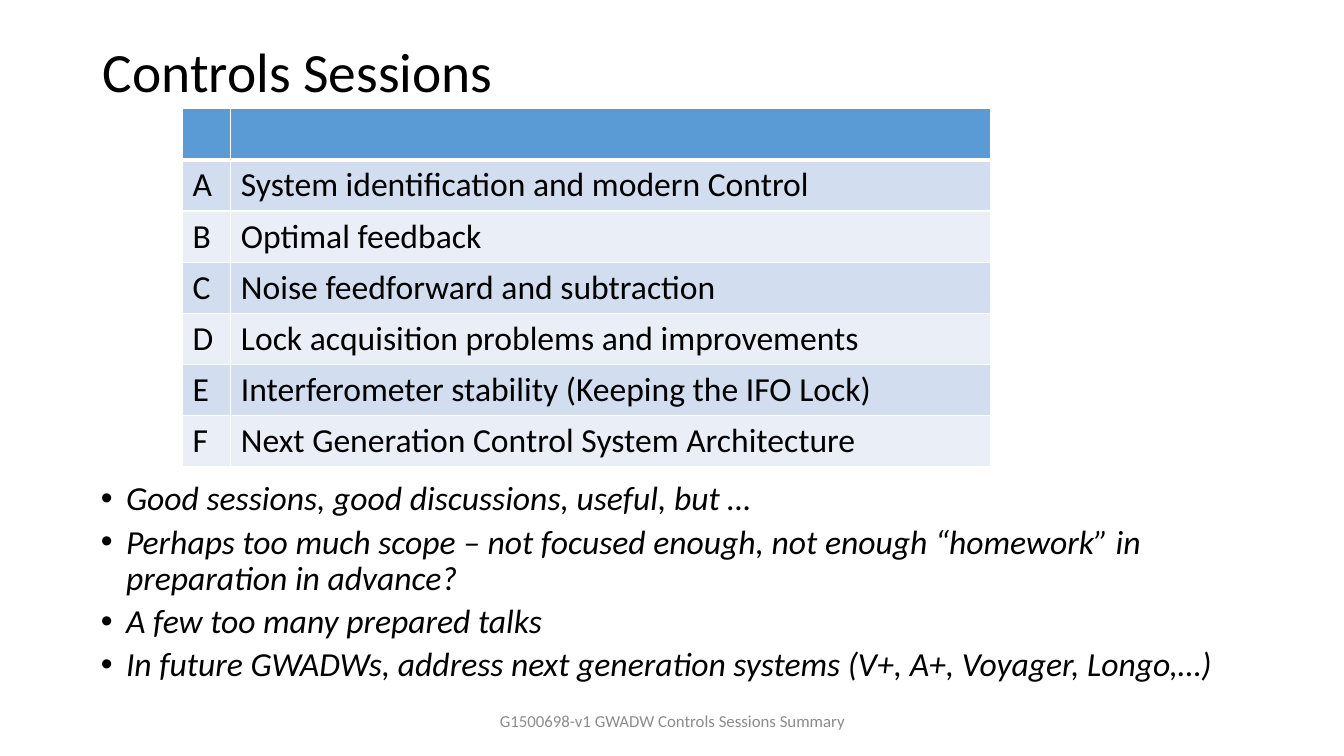
from dataclasses import dataclass

import pptx
import pptx.dml.color
import pptx.enum.text
import pptx.oxml
import pptx.oxml.ns
import pptx.util
from pptx.util import Inches

PP_ALIGN = pptx.enum.text.PP_ALIGN
ANCHOR = pptx.enum.text.MSO_ANCHOR


@dataclass(frozen=True)
class Theme:
    font: str = "Calibri"
    text: str = "000000"
    muted: str = "8C8C8C"
    header: str = "5B9BD5"
    bands: tuple = ("D2DEEF", "EAEFF7")
    border: str = "FFFFFF"
    title_size: float = 39.6
    body_size: float = 24
    footer_size: float = 12


THEME = Theme()

SESSIONS = [
    "System identification and modern Control",
    "Optimal feedback",
    "Noise feedforward and subtraction",
    "Lock acquisition problems and improvements",
    "Interferometer stability (Keeping the IFO Lock)",
    "Next Generation Control System Architecture",
]
REMARKS = [
    "Good sessions, good discussions, useful, but …",
    "Perhaps too much scope – not focused enough, not enough “homework” in preparation in advance?",
    "A few too many prepared talks",
    "In future GWADWs, address next generation systems (V+, A+, Voyager, Longo,…)",
]


def rgb(color):
    return pptx.dml.color.RGBColor.from_string(color)


def style(p, size, color=THEME.text, italic=None):
    p.font.name = THEME.font
    p.font.size = pptx.util.Pt(size)
    p.font.color.rgb = rgb(color)
    p.font.italic = italic


def place(sp, left, top, width, height):
    sp.left, sp.top = Inches(left), Inches(top)
    sp.width, sp.height = Inches(width), Inches(height)


def set_title(slide, text):
    sp = slide.shapes.title
    place(sp, 0.92, 0.4, 11.5, 0.68)
    tf = sp.text_frame
    tf.text = text
    tf.auto_size = pptx.enum.text.MSO_AUTO_SIZE.NONE
    tf.vertical_anchor = ANCHOR.MIDDLE
    p = tf.paragraphs[0]
    p.alignment = PP_ALIGN.LEFT
    p.line_spacing = 0.9
    style(p, THEME.title_size)


def set_borders(cell, top, bottom):
    """Draw all four cell sides; top and bottom are widths in points."""
    tc_pr = cell._tc.get_or_add_tcPr()
    widths = {"lnL": 1, "lnR": 1, "lnT": top, "lnB": bottom}
    for i, (side, width) in enumerate(widths.items()):
        tc_pr.insert(i, pptx.oxml.parse_xml(
            f'<a:{side} {pptx.oxml.ns.nsdecls("a")} w="{pptx.util.Pt(width)}">'
            f'<a:solidFill><a:srgbClr val="{THEME.border}"/></a:solidFill></a:{side}>'))


def add_session_table(slide, sessions):
    rows = [("", "")] + list(zip("ABCDEF", sessions))
    column_widths = (0.48, 7.54)
    row_height = 0.5
    table = slide.shapes.add_table(
        len(rows), 2, Inches(1.81), Inches(1.08),
        Inches(sum(column_widths)), Inches(row_height * len(rows))).table
    for column, width in zip(table.columns, column_widths):
        column.width = Inches(width)
    for i, row in enumerate(rows):
        table.rows[i].height = Inches(row_height)
        fill = THEME.bands[(i - 1) % 2] if i else THEME.header
        for j, text in enumerate(row):
            cell = table.cell(i, j)
            cell.text = text
            cell.fill.solid()
            cell.fill.fore_color.rgb = rgb(fill)
            set_borders(cell, top=3 if i == 1 else 1, bottom=3 if i == 0 else 1)
            style(cell.text_frame.paragraphs[0], THEME.body_size)


def set_bullet(p):
    p_pr = p._p.get_or_add_pPr()
    p_pr.set("marL", str(Inches(0.75)))
    p_pr.set("indent", str(Inches(-0.25)))
    for xml in ('buFont {} typeface="Arial"', 'buChar {} char="•"'):
        p_pr.append(pptx.oxml.parse_xml(f'<a:{xml.format(pptx.oxml.ns.nsdecls("a"))}/>'))


def set_remarks(slide, remarks):
    sp = slide.placeholders[1]
    place(sp, 0.4, 4.73, 12.59, 2.22)
    tf = sp.text_frame
    tf.text = "\n".join(remarks)
    tf.auto_size = pptx.enum.text.MSO_AUTO_SIZE.NONE
    for p in tf.paragraphs:
        p.level = 1
        p.line_spacing = 0.9
        p.space_before = pptx.util.Pt(5)
        set_bullet(p)
        style(p, THEME.body_size, italic=True)


def add_footer(slide, text):
    sp = slide.shapes.add_textbox(Inches(4.42), Inches(6.95), Inches(4.5), Inches(0.4))
    tf = sp.text_frame
    tf.word_wrap = True
    tf.vertical_anchor = ANCHOR.MIDDLE
    tf.text = text
    p = tf.paragraphs[0]
    p.alignment = PP_ALIGN.CENTER
    style(p, THEME.footer_size, THEME.muted)


def main():
    prs = pptx.Presentation()
    prs.slide_width, prs.slide_height = Inches(13.33), Inches(7.5)
    slide = prs.slides.add_slide(prs.slide_layouts[1])
    set_title(slide, "Controls Sessions")
    add_session_table(slide, SESSIONS)
    set_remarks(slide, REMARKS)
    add_footer(slide, "G1500698-v1 GWADW Controls Sessions Summary")
    prs.save("out.pptx")


if __name__ == "__main__":
    main()
